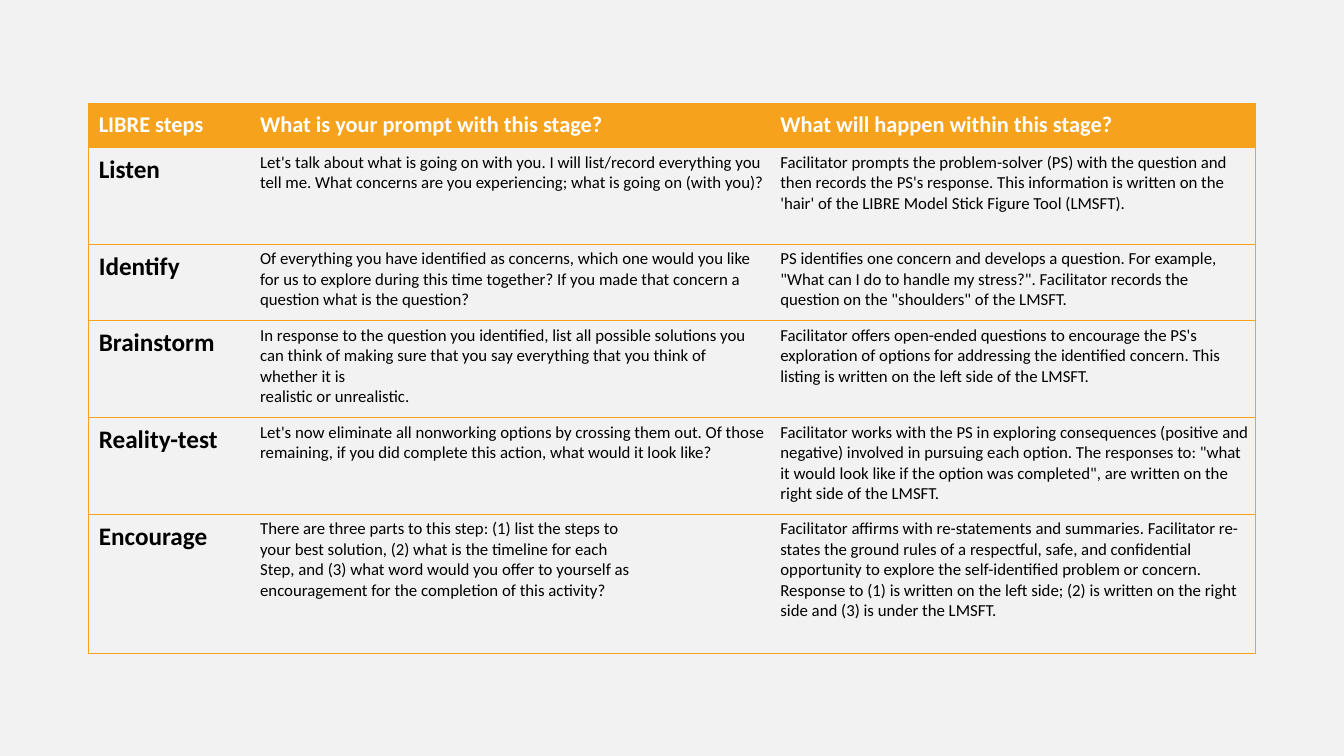
"""Build the slide with the table of the LIBRE steps."""
from dataclasses import dataclass

from lxml import etree
from pptx import Presentation
from pptx import util as u
from pptx.dml.color import RGBColor
from pptx.enum import text
from pptx.oxml import ns
from pptx.table import _Cell

COLORS = {"page": "F2F2F2", "accent": "F6A21D", "header": "FFFFFF", "body": "000000"}
COLUMN_WIDTHS = (1.6, 5.16, 4.81)
ROW_HEIGHTS = (0.44, 0.96, 0.76, 0.96, 0.96, 1.38)
HEADINGS = (
    "LIBRE steps",
    "What is your prompt with this stage?",
    "What will happen within this stage?",
)


@dataclass(frozen=True)
class CellLook:
    """Formatting shared by one kind of cell."""

    size: int
    bold: bool
    color: str
    padding: float
    spacing: float


@dataclass(frozen=True)
class Step:
    """One stage of the model."""

    name: str
    prompt: str
    outcome: str


HEADER_LOOK = CellLook(16, True, "header", 0.06, 1.07)
NAME_LOOK = CellLook(18, True, "body", 0.05, 1.07)
DETAIL_LOOK = CellLook(12, False, "body", 0.05, 1.0)

STEPS = (
    Step(
        "Listen",
        "Let's talk about what is going on with you. I will list/record everything you "
        "tell me. What concerns are you experiencing; what is going on (with you)?",
        "Facilitator prompts the problem-solver (PS) with the question and then records "
        "the PS's response. This information is written on the 'hair' of the LIBRE Model "
        "Stick Figure Tool (LMSFT).",
    ),
    Step(
        "Identify",
        "Of everything you have identified as concerns, which one would you like for us "
        "to explore during this time together? If you made that concern a question what "
        "is the question?",
        "PS identifies one concern and develops a question. For example, \"What can I do "
        "to handle my stress?\". Facilitator records the question on the \"shoulders\" of "
        "the LMSFT.",
    ),
    Step(
        "Brainstorm",
        "In response to the question you identified, list all possible solutions you can "
        "think of making sure that you say everything that you think of whether it is\n"
        "realistic or unrealistic.",
        "Facilitator offers open-ended questions to encourage the PS's exploration of "
        "options for addressing the identified concern. This listing is written on the "
        "left side of the LMSFT.",
    ),
    Step(
        "Reality-test",
        "Let's now eliminate all nonworking options by crossing them out. Of those "
        "remaining, if you did complete this action, what would it look like?",
        "Facilitator works with the PS in exploring consequences (positive and negative) "
        "involved in pursuing each option. The responses to: \"what it would look like if "
        "the option was completed\", are written on the right side of the LMSFT.",
    ),
    Step(
        "Encourage",
        "There are three parts to this step: (1) list the steps to\n"
        "your best solution, (2) what is the timeline for each\n"
        "Step, and (3) what word would you offer to yourself as\n"
        "encouragement for the completion of this activity?",
        "Facilitator affirms with re-statements and summaries. Facilitator re-states the "
        "ground rules of a respectful, safe, and confidential opportunity to explore the "
        "self-identified problem or concern. Response to (1) is written on the left side; "
        "(2) is written on the right side and (3) is under the LMSFT.",
    ),
)


def set_borders(cell: _Cell, column: int) -> None:
    """Rule the cell above and below, and at the outer sides of the table."""
    ruled = {"L": column == 0, "R": column == len(COLUMN_WIDTHS) - 1, "T": True, "B": True}
    properties = cell._tc.get_or_add_tcPr()
    for position, (side, visible) in enumerate(ruled.items()):
        line = etree.Element(ns.qn(f"a:ln{side}"), w=str(u.Pt(0.5)))
        if visible:
            paint = etree.SubElement(line, ns.qn("a:solidFill"))
            etree.SubElement(paint, ns.qn("a:srgbClr"), val=COLORS["accent"])
        else:
            etree.SubElement(line, ns.qn("a:noFill"))
        properties.insert(position, line)


def fill_cell(cell: _Cell, wording: str, look: CellLook) -> None:
    """Write the wording into the cell in the given look."""
    cell.text = wording
    padding = u.Inches(look.padding)
    layout = {
        "margin_left": u.Inches(0.1),
        "margin_right": padding,
        "margin_top": padding,
        "margin_bottom": padding,
        "vertical_anchor": text.MSO_ANCHOR.TOP,
    }
    for attribute, value in layout.items():
        setattr(cell, attribute, value)
    lettering = {"name": "Calibri", "size": u.Pt(look.size), "bold": look.bold}
    for paragraph in cell.text_frame.paragraphs:
        paragraph.line_spacing = look.spacing
        for run in paragraph.runs:
            for attribute, value in lettering.items():
                setattr(run.font, attribute, value)
            run.font.color.rgb = RGBColor.from_string(COLORS[look.color])


def main() -> None:
    """Create the presentation and save it."""
    deck = Presentation()
    deck.slide_width, deck.slide_height = u.Inches(13.33), u.Inches(7.5)
    slide = deck.slides.add_slide(deck.slide_layouts[6])
    slide.background.fill.solid()
    slide.background.fill.fore_color.rgb = RGBColor.from_string(COLORS["page"])

    stages = slide.shapes.add_table(
        len(ROW_HEIGHTS), len(COLUMN_WIDTHS), u.Inches(0.88), u.Inches(1.02),
        u.Inches(sum(COLUMN_WIDTHS)), u.Inches(sum(ROW_HEIGHTS)),
    ).table
    stages.horz_banding = False
    for column, width in zip(stages.columns, COLUMN_WIDTHS):
        column.width = u.Inches(width)
    for row, height in zip(stages.rows, ROW_HEIGHTS):
        row.height = u.Inches(height)

    contents = [HEADINGS, *((step.name, step.prompt, step.outcome) for step in STEPS)]
    for row_number, wordings in enumerate(contents):
        for column_number, wording in enumerate(wordings):
            cell = stages.cell(row_number, column_number)
            if row_number == 0:
                look = HEADER_LOOK
                cell.fill.solid()
                cell.fill.fore_color.rgb = RGBColor.from_string(COLORS["accent"])
            else:
                look = DETAIL_LOOK if column_number else NAME_LOOK
                cell.fill.background()
            fill_cell(cell, wording, look)
            set_borders(cell, column_number)
    deck.save("out.pptx")


if __name__ == "__main__":
    main()
